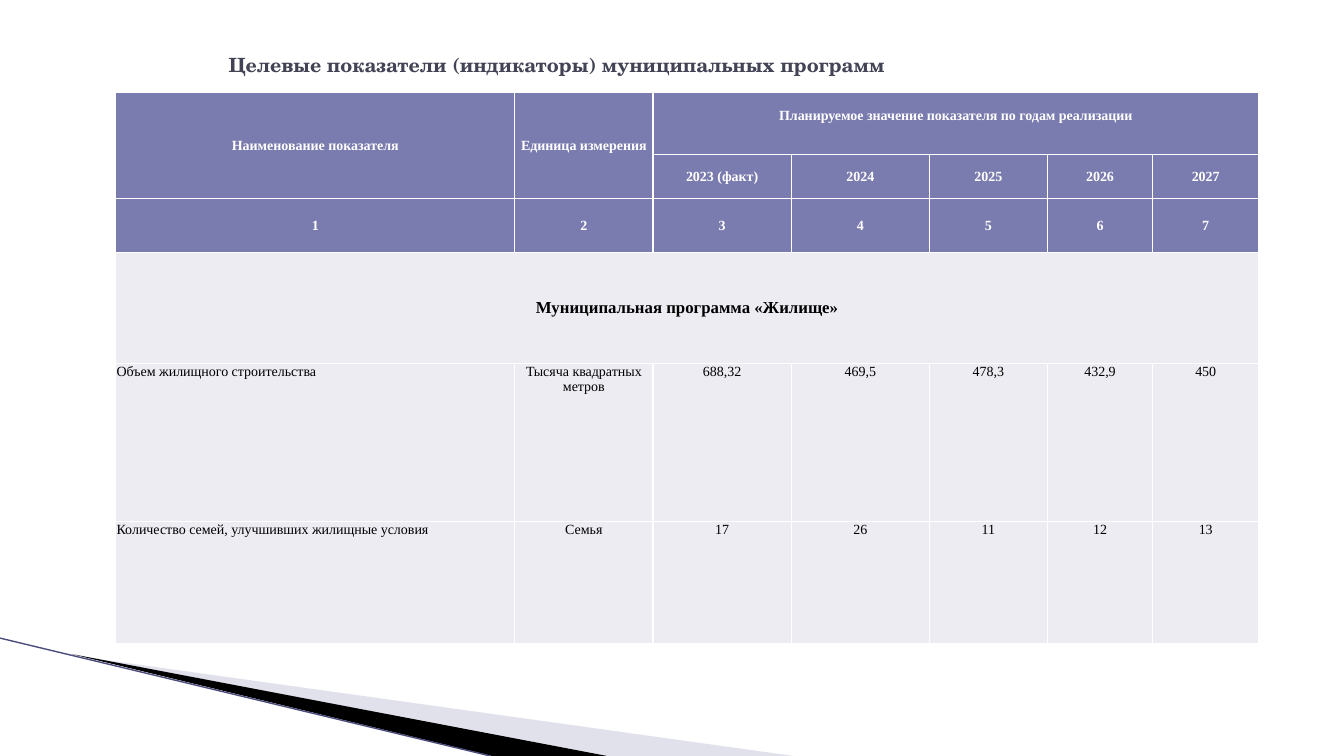
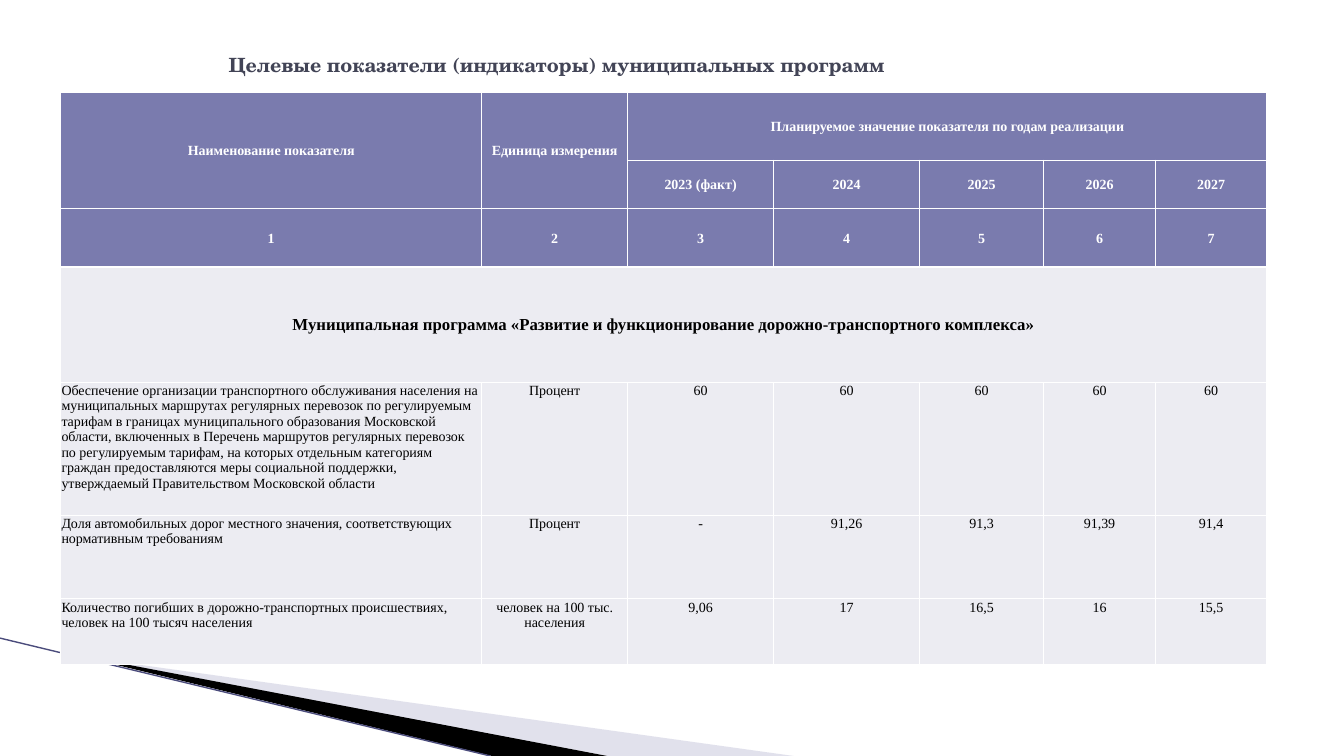
"""Build two slides with target indicators of municipal programmes."""
import pptx
import pptx.dml.color
import pptx.enum.shapes
import pptx.enum.text
import pptx.oxml
import pptx.oxml.ns
import pptx.util
from lxml import etree

Cm = pptx.util.Cm
Pt = pptx.util.Pt
ALIGN = pptx.enum.text.PP_ALIGN
ANCHOR = pptx.enum.text.MSO_ANCHOR

SLIDE_WIDTH, SLIDE_HEIGHT = 33.87, 19.05
WHITE, BLACK = "FFFFFF", "000000"
TITLE_COLOUR = "424456"
HEADER_FILL, BODY_FILL = "7A7BAE", "ECECF2"
PALE_WEDGE, EDGE_LINE = "B6B6D1", "4B4C7C"
TITLE_FONT, TABLE_FONT = "TeX Gyre Schola", "Times New Roman"

TITLE = "Целевые показатели (индикаторы) муниципальных программ"
HEADER_ROWS = [
    ["Наименование показателя", "Единица измерения",
     "Планируемое значение показателя по годам реализации", "", "", "", ""],
    ["", "", "2023 (факт)", "2024", "2025", "2026", "2027"],
    ["1", "2", "3", "4", "5", "6", "7"],
]
COLUMN_PERCENTS = [34.9, 12.1, 12.1, 12.1, 10.3, 9.25, 9.25]
TABLE_TOP = 2.34
PROGRAMME_ROW = len(HEADER_ROWS)

HOUSING = {
    "left": 2.92, "width": 28.8,
    "row_heights": [1.55, 1.12, 1.35, 2.79, 3.99, 3.07],
    "years_lift": 0.4,
    "programme": "Муниципальная программа «Жилище»",
    "indicators": [
        ["Объем жилищного строительства", "Тысяча квадратных метров",
         "688,32", "469,5", "478,3", "432,9", "450"],
        ["Количество семей, улучшивших жилищные условия", "Семья",
         "17", "26", "11", "12", "13"],
    ],
}
ROADS = {
    "left": 1.53, "width": 30.4,
    "row_heights": [1.7, 1.22, 1.47, 2.9, 3.35, 2.11, 1.65],
    "years_lift": 0,
    "programme": "Муниципальная программа «Развитие и функционирование "
                 "дорожно-транспортного комплекса»",
    "indicators": [
        ["Обеспечение организации транспортного обслуживания населения на "
         "муниципальных маршрутах регулярных перевозок по регулируемым тарифам "
         "в границах муниципального образования Московской области, включенных "
         "в Перечень маршрутов регулярных перевозок по регулируемым тарифам, "
         "на которых отдельным категориям граждан предоставляются меры "
         "социальной поддержки, утверждаемый Правительством Московской области",
         "Процент", "60", "60", "60", "60", "60"],
        ["Доля автомобильных дорог местного значения, соответствующих "
         "нормативным требованиям",
         "Процент", "-", "91,26", "91,3", "91,39", "91,4"],
        ["Количество погибших в дорожно-транспортных происшествиях, человек "
         "на 100 тысяч населения",
         "человек на 100 тыс. населения", "9,06", "17", "16,5", "16", "15,5"],
    ],
}


def rgb(colour):
    return pptx.dml.color.RGBColor.from_string(colour)


def format_text(paragraph, font_name, size, colour, bold):
    for run in paragraph.runs:
        run.font.name = font_name
        run.font.size = Pt(size)
        run.font.bold = bold
        run.font.color.rgb = rgb(colour)


def add_wedge(slide, corners, colour, opacity=100):
    points = [(Cm(x), Cm(y)) for x, y in corners]
    outline = slide.shapes.build_freeform(*points[0], scale=1.0)
    outline.add_line_segments(points[1:], close=True)
    wedge = outline.convert_to_shape()
    wedge.shadow.inherit = False
    wedge.fill.solid()
    wedge.fill.fore_color.rgb = rgb(colour)
    wedge.line.fill.background()
    if opacity < 100:
        tint = wedge.fill._xPr.find(".//" + pptx.oxml.ns.qn("a:srgbClr"))
        alpha = etree.SubElement(tint, pptx.oxml.ns.qn("a:alpha"))
        alpha.set("val", str(opacity * 1000))


def add_edge(slide, start, end):
    edge = slide.shapes.add_connector(
        pptx.enum.shapes.MSO_CONNECTOR.STRAIGHT,
        *(Cm(value) for value in start + end))
    edge.line.color.rgb = rgb(EDGE_LINE)
    edge.line.width = Pt(1)
    etree.SubElement(edge._element.spPr, pptx.oxml.ns.qn("a:effectLst"))


def add_corner(slide):
    add_wedge(slide, [(1.85, 16.52), (20, SLIDE_HEIGHT), (15.3, SLIDE_HEIGHT)],
              PALE_WEDGE, opacity=40)
    add_wedge(slide, [(1.8, 16.48), (15.3, SLIDE_HEIGHT), (12.4, SLIDE_HEIGHT)],
              BLACK)
    add_edge(slide, (0, 16.08), (12.36, SLIDE_HEIGHT))


def add_title(slide):
    title = slide.shapes.add_textbox(Cm(5.51), Cm(0.76), Cm(22.86), Cm(1.75))
    frame = title.text_frame
    frame.word_wrap = True
    frame.vertical_anchor = ANCHOR.MIDDLE
    frame.text = TITLE
    format_text(frame.paragraphs[0], TITLE_FONT, 14, TITLE_COLOUR, True)


def add_borders(cell):
    properties = cell._tc.get_or_add_tcPr()
    for side in ("lnL", "lnR", "lnT", "lnB"):
        properties.append(pptx.oxml.parse_xml(
            f'<a:{side} {pptx.oxml.ns.nsdecls("a")} w="12700"><a:solidFill>'
            f'<a:srgbClr val="{WHITE}"/></a:solidFill></a:{side}>'))


def fill_cell(cell, text, row, column):
    is_header = row < PROGRAMME_ROW
    is_programme = row == PROGRAMME_ROW
    is_indicator = row > PROGRAMME_ROW
    add_borders(cell)
    cell.fill.solid()
    cell.fill.fore_color.rgb = rgb(HEADER_FILL if is_header else BODY_FILL)
    cell.margin_left = cell.margin_right = cell.margin_top = Cm(0.02)
    cell.margin_bottom = 0
    cell.vertical_anchor = ANCHOR.TOP if is_indicator else ANCHOR.MIDDLE
    cell.text_frame.text = text
    paragraph = cell.text_frame.paragraphs[0]
    is_name = is_indicator and column == 0
    paragraph.alignment = ALIGN.LEFT if is_name else ALIGN.CENTER
    format_text(paragraph, TABLE_FONT, 12 if is_programme else 10,
                WHITE if is_header else BLACK, not is_indicator)


def add_indicator_table(slide, programme):
    column_count = len(COLUMN_PERCENTS)
    programme_row = [programme["programme"]] + [""] * (column_count - 1)
    rows = HEADER_ROWS + [programme_row] + programme["indicators"]
    heights = programme["row_heights"]
    table = slide.shapes.add_table(
        len(rows), column_count, Cm(programme["left"]), Cm(TABLE_TOP),
        Cm(programme["width"]), Cm(sum(heights))).table
    table.first_row = False
    table.horz_banding = False
    for column, percent in zip(table.columns, COLUMN_PERCENTS):
        column.width = Cm(programme["width"] * percent / 100)
    for row, height in zip(table.rows, heights):
        row.height = Cm(height)
    for row, texts in enumerate(rows):
        for column, text in enumerate(texts):
            fill_cell(table.cell(row, column), text, row, column)
    last = column_count - 1
    for first_cell, last_cell in [((0, 0), (1, 0)), ((0, 1), (1, 1)),
                                  ((0, 2), (0, last)),
                                  ((PROGRAMME_ROW, 0), (PROGRAMME_ROW, last))]:
        table.cell(*first_cell).merge(table.cell(*last_cell))
    table.cell(0, 2).margin_bottom = Cm(programme["years_lift"])


def main():
    presentation = pptx.Presentation()
    presentation.slide_width = Cm(SLIDE_WIDTH)
    presentation.slide_height = Cm(SLIDE_HEIGHT)
    for programme in (HOUSING, ROADS):
        slide = presentation.slides.add_slide(presentation.slide_layouts[6])
        add_corner(slide)
        add_title(slide)
        add_indicator_table(slide, programme)
    presentation.save("out.pptx")


if __name__ == "__main__":
    main()
